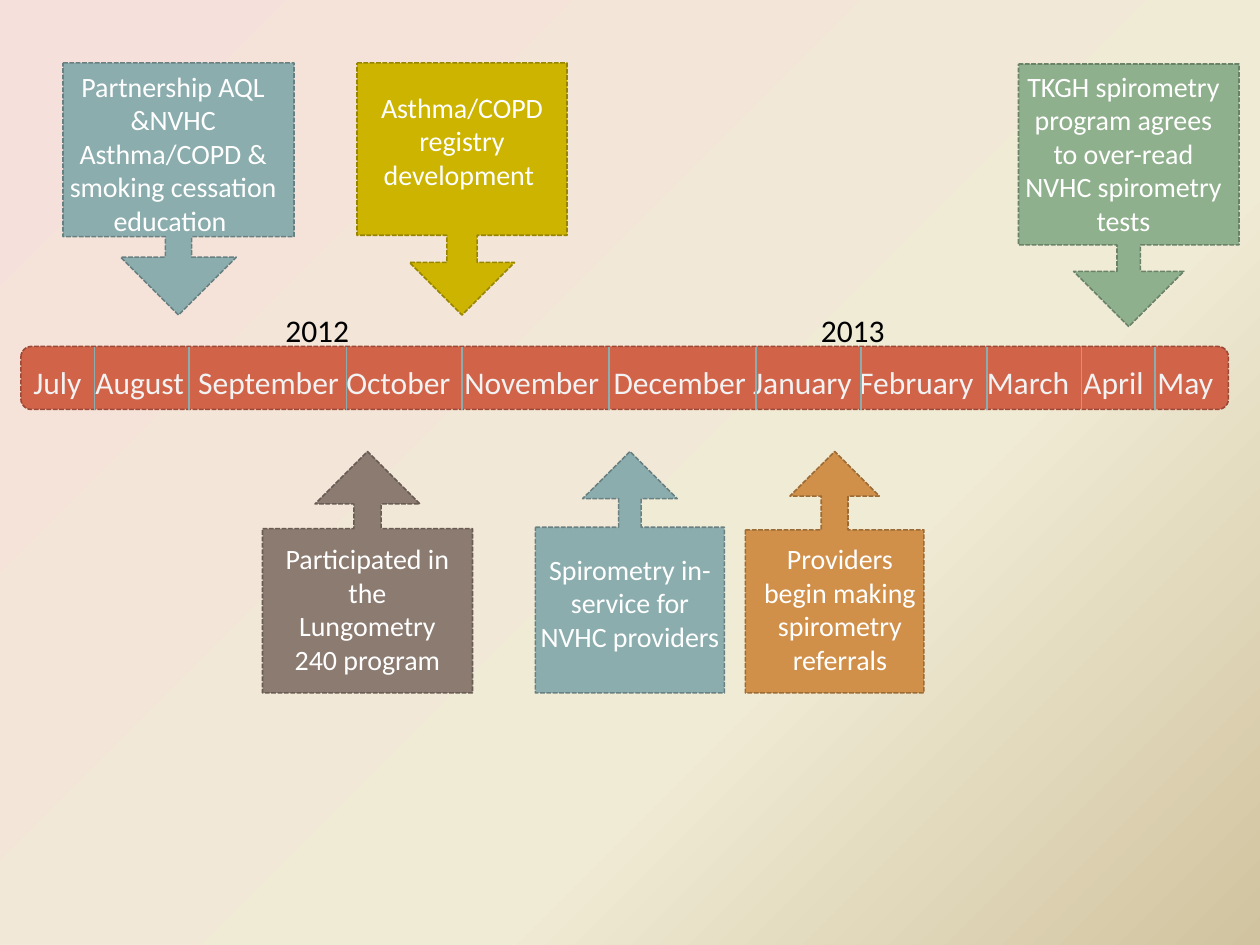
from copy import deepcopy
from dataclasses import dataclass
from typing import NamedTuple

from lxml.etree import SubElement
from pptx import Presentation
from pptx.dml.color import RGBColor
from pptx.enum.dml import MSO_LINE
from pptx.enum.shapes import MSO_CONNECTOR, MSO_SHAPE
from pptx.enum.text import MSO_AUTO_SIZE, PP_ALIGN
from pptx.oxml.ns import qn
from pptx.util import Inches, Pt

COLUMNS, ROWS = 120, 90
WIDTH, HEIGHT = Inches(10), Inches(7.5)
FONT = "Calibri"
COLORS = {
    "pink": "F6E0DB", "cream": "F0EBD5", "sand": "D1C39F",
    "red": "D16349", "red edge": "9B4936",
    "teal": "8CADAE", "teal edge": "688081",
    "gold": "CCB400", "gold edge": "978500",
    "green": "8FB08C", "green edge": "6A8268",
    "brown": "8C7B70", "brown edge": "685B53",
    "orange": "D19049", "orange edge": "9B6B36",
    "white": "FFFFFF", "pale": "F2F2F2", "black": "000000",
}


class Box(NamedTuple):
    column: float
    row: float
    columns: float
    rows: float


@dataclass
class Month:
    name: str
    text_column: float
    end_column: float | None


@dataclass
class Milestone:
    callout: Box
    points_down: bool
    color: str
    stem: float
    body: float
    label: Box
    paragraphs: list[str]


BAR = Box(2, 33, 115, 6)
MONTHS_BOX = Box(2, 34, 117, 4.8)
MONTHS = [
    Month("July", 3.2, 9), Month("August", 9.1, 18),
    Month("September", 18.9, 33), Month("October", 33, 44),
    Month("November", 44.25, 58), Month("December", 58.45, 72),
    Month("January", 71.75, 82), Month("February", 81.85, 94),
    Month("March", 94, 103), Month("April", 103.2, 110),
    Month("May", 110.25, None),
]
YEARS = {"2012": Box(26, 29, 13, 4.8), "2013": Box(77, 29, 11, 4.8)}
MILESTONES = [
    Milestone(Box(6, 6, 22, 24), True, "teal", 0.114, 0.689, Box(5, 6, 23, 17.4),
              ["Partnership AQL &NVHC", "Asthma/COPD & smoking cessation education "]),
    Milestone(Box(34, 6, 20, 24), True, "gold", 0.144, 0.684, Box(33, 8, 22, 10.9),
              ["Asthma/COPD registry development "]),
    Milestone(Box(97, 6.1, 21, 25), True, "green", 0.106, 0.689, Box(96, 6, 22, 17.4),
              ["TKGH spirometry program agrees to over-read NVHC spirometry tests"]),
    Milestone(Box(25, 43, 20, 23), False, "brown", 0.13, 0.68, Box(26, 51, 18, 14.2),
              ["Participated in the Lungometry 240 program"]),
    Milestone(Box(51, 43, 18, 23), False, "teal", 0.119, 0.686, Box(50, 52, 20, 10.9),
              ["Spirometry in-service for NVHC providers"]),
    Milestone(Box(71, 43, 17, 23), False, "orange", 0.15, 0.675, Box(71, 51, 18, 14.2),
              ["Providers begin making spirometry referrals"]),
]


def rgb(color: str) -> RGBColor:
    return RGBColor.from_string(COLORS[color])


def x(column: float) -> int:
    return round(WIDTH * column / COLUMNS)


def y(row: float) -> int:
    return round(HEIGHT * row / ROWS)


def place(box: Box) -> tuple[int, int, int, int]:
    return x(box.column), y(box.row), x(box.columns), y(box.rows)


def paint_background(slide) -> None:
    fill = slide.background.fill
    fill.gradient()
    fill.gradient_angle = 315
    stop_list = slide.element.find(".//" + qn("a:gsLst"))
    stop_list.append(deepcopy(stop_list[-1]))
    for stop, (position, color) in zip(
        fill.gradient_stops, [(0, "pink"), (0.65, "cream"), (1, "sand")]
    ):
        stop.position = position
        stop.color.rgb = rgb(color)


def draw_dashed(slide, preset: MSO_SHAPE, box: Box, color: str):
    shape = slide.shapes.add_shape(preset, *place(box))
    shape.shadow.inherit = False
    shape.fill.solid()
    shape.fill.fore_color.rgb = rgb(color)
    shape.line.color.rgb = rgb(color + " edge")
    shape.line.width = Pt(0.9)
    shape.line.dash_style = MSO_LINE.SQUARE_DOT
    return shape


def draw_text(slide, box: Box, paragraphs: list[str], size: int, color: str,
              align: PP_ALIGN | None = None):
    frame = slide.shapes.add_textbox(*place(box)).text_frame
    frame.word_wrap = True
    frame.auto_size = MSO_AUTO_SIZE.SHAPE_TO_FIT_TEXT
    for index, words in enumerate(paragraphs):
        paragraph = frame.add_paragraph() if index else frame.paragraphs[0]
        if align is not None:
            paragraph.alignment = align
        run = paragraph.add_run()
        run.text = words
        run.font.name = FONT
        run.font.size = Pt(size)
        run.font.color.rgb = rgb(color)
    return frame


def draw_months(slide) -> None:
    names = "\t".join(month.name for month in MONTHS)
    frame = draw_text(slide, MONTHS_BOX, [names], 18, "pale")
    tabs = SubElement(frame.paragraphs[0]._p.get_or_add_pPr(), qn("a:tabLst"))
    for month in MONTHS[1:]:
        offset = x(month.text_column - MONTHS[0].text_column)
        SubElement(tabs, qn("a:tab"), pos=str(offset), algn="l")


def draw_divider(slide, column: float) -> None:
    divider = slide.shapes.add_connector(
        MSO_CONNECTOR.STRAIGHT, x(column), y(BAR.row), x(column), y(BAR.row + BAR.rows)
    )
    divider.line.color.rgb = rgb("teal")
    divider.line.width = Pt(0.75)
    SubElement(divider._element.spPr, qn("a:effectLst"))


def draw_callout(slide, milestone: Milestone) -> None:
    preset = (MSO_SHAPE.DOWN_ARROW_CALLOUT if milestone.points_down
              else MSO_SHAPE.UP_ARROW_CALLOUT)
    callout = draw_dashed(slide, preset, milestone.callout, milestone.color)
    for index, share in enumerate([milestone.stem, 0.25, 0.25, milestone.body]):
        callout.adjustments[index] = share


def main() -> None:
    deck = Presentation()
    deck.slide_width, deck.slide_height = WIDTH, HEIGHT
    slide = deck.slides.add_slide(deck.slide_layouts[6])
    paint_background(slide)
    draw_dashed(slide, MSO_SHAPE.ROUNDED_RECTANGLE, BAR, "red")
    draw_months(slide)
    for month in MONTHS:
        if month.end_column is not None:
            draw_divider(slide, month.end_column)
    for milestone in MILESTONES:
        draw_callout(slide, milestone)
        draw_text(slide, milestone.label, milestone.paragraphs, 16, "white",
                  PP_ALIGN.CENTER)
    for year, box in YEARS.items():
        draw_text(slide, box, [year], 18, "black")
    deck.save("out.pptx")


if __name__ == "__main__":
    main()
